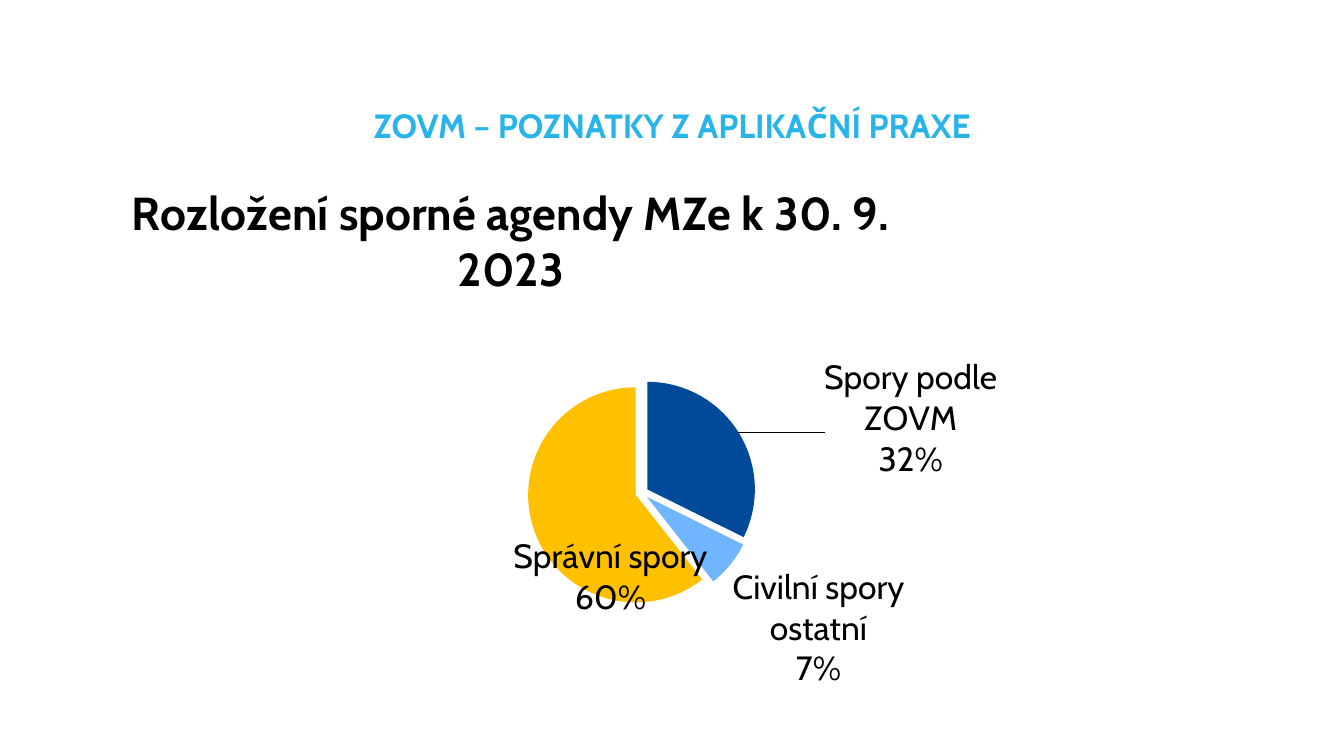
import pptx
import pptx.chart.data
import pptx.dml.color
import pptx.enum.chart
import pptx.enum.text
import pptx.oxml
import pptx.oxml.ns
import pptx.util
from pptx.util import Inches

FONT = "Cabin"
COLORS = {
    "heading": "29B4E9",
    "text": "000000",
    "zovm": "004A99",
    "civil": "70B5FF",
    "administrative": "FFC000",
}
# Category, value, colour
DISPUTES = [
    ("Spory podle ZOVM", 32, "zovm"),
    ("Civilní spory ostatní", 7, "civil"),
    ("Správní spory", 60, "administrative"),
]
# Label shifts as fractions of the chart, by point
LABEL_SHIFTS = {0: (0.08, 0.09), 2: (0.17, 0.01)}


def rgb(name):
    return pptx.dml.color.RGBColor.from_string(COLORS[name])


def style(font, size, bold=False, color="text"):
    font.name = FONT
    font.size = pptx.util.Pt(size)
    font.bold = bold
    font.color.rgb = rgb(color)


def chart_element(tag, content="", **attributes):
    values = "".join(f' {key}="{value}"' for key, value in attributes.items())
    return pptx.oxml.parse_xml(
        f'<c:{tag} {pptx.oxml.ns.nsdecls("c")}{values}>{content}</c:{tag}>')


def set_layout(parent, index, **settings):
    """Give a chart part a manual layout, as fractions of the chart."""
    for old in parent.findall(pptx.oxml.ns.qn("c:layout")):
        parent.remove(old)
    content = "".join(f'<c:{key} val="{value}"/>' for key, value in settings.items())
    parent.insert(index, chart_element(
        "layout", f"<c:manualLayout>{content}</c:manualLayout>"))


def show_category_and_percent(labels):
    for tag, shown in (("showVal", 0), ("showCatName", 1), ("showPercent", 1)):
        labels.find(pptx.oxml.ns.qn(f"c:{tag}")).set("val", str(shown))
    labels.find(pptx.oxml.ns.qn("c:showBubbleSize")).addnext(
        chart_element("separator", "\n"))


def add_heading(slide, left, top, width, height):
    heading = slide.shapes.title
    heading.left, heading.top = Inches(left), Inches(top)
    heading.width, heading.height = Inches(width), Inches(height)
    frame = heading.text_frame
    frame.margin_left = frame.margin_top = frame.margin_right = frame.margin_bottom = 0
    frame.vertical_anchor = pptx.enum.text.MSO_ANCHOR.TOP
    frame.word_wrap = True
    frame.text = "ZOVM – POZNATKY Z APLIKAČNÍ PRAXE"
    line = frame.paragraphs[0]
    line.alignment = pptx.enum.text.PP_ALIGN.CENTER
    line.line_spacing = 0.9
    style(line.runs[0].font, 48, True, "heading")


def add_dispute_pie(slide, left, top, width, height):
    data = pptx.chart.data.CategoryChartData()
    data.categories = [category for category, _, _ in DISPUTES]
    data.add_series("Series 1", [value for _, value, _ in DISPUTES])
    chart = slide.shapes.add_chart(
        pptx.enum.chart.XL_CHART_TYPE.PIE, Inches(left), Inches(top),
        Inches(width), Inches(height), data).chart
    style(chart.font, 10)
    chart.has_legend = False

    # Chart title
    chart.has_title = True
    title = chart.chart_title
    title.text_frame.text = "Rozložení sporné agendy MZe k 30. 9. 2023"
    style(title.text_frame.paragraphs[0].runs[0].font, 66, True)
    set_layout(title._element, 1, xMode="edge", yMode="edge", x=0.02, y=0.02)

    # Pie and its slices
    plot = chart.plots[0]
    plot.vary_by_categories = True
    set_layout(plot._element.getparent(), 0, layoutTarget="inner", xMode="edge",
               yMode="edge", x=0.41, y=0.4, w=0.22, h=0.42)
    disputes = plot.series[0]
    disputes._element.find(pptx.oxml.ns.qn("c:tx")).addnext(
        chart_element("explosion", val=6))
    for index, (_, _, color) in enumerate(DISPUTES):
        fill = disputes.points[index].format.fill
        fill.solid()
        fill.fore_color.rgb = rgb(color)

    # Labels
    outside = pptx.enum.chart.XL_LABEL_POSITION.OUTSIDE_END
    labels = disputes.data_labels
    style(labels.font, 48)
    labels.position = outside
    show_category_and_percent(labels._element)
    for index, (x, y) in LABEL_SHIFTS.items():
        label = disputes.points[index].data_label
        if index == 2:
            # The stated share is rounded down
            label.text_frame.text = "Správní spory\n60%"
            for line in label.text_frame.paragraphs:
                style(line.runs[0].font, 48)
        else:
            style(label.font, 48)
        label.position = outside
        element = labels._element.findall(pptx.oxml.ns.qn("c:dLbl"))[-1]
        show_category_and_percent(element)
        set_layout(element, 1, x=x, y=y)


def main():
    deck = pptx.Presentation()
    deck.slide_width, deck.slide_height = Inches(26.67), Inches(15)
    slide = deck.slides.add_slide(deck.slide_layouts[5])
    add_heading(slide, 1.37, 2.17, 23.94, 1.34)
    add_dispute_pie(slide, 2.04, 3.19, 20.57, 10.8)
    deck.save("out.pptx")


if __name__ == "__main__":
    main()
